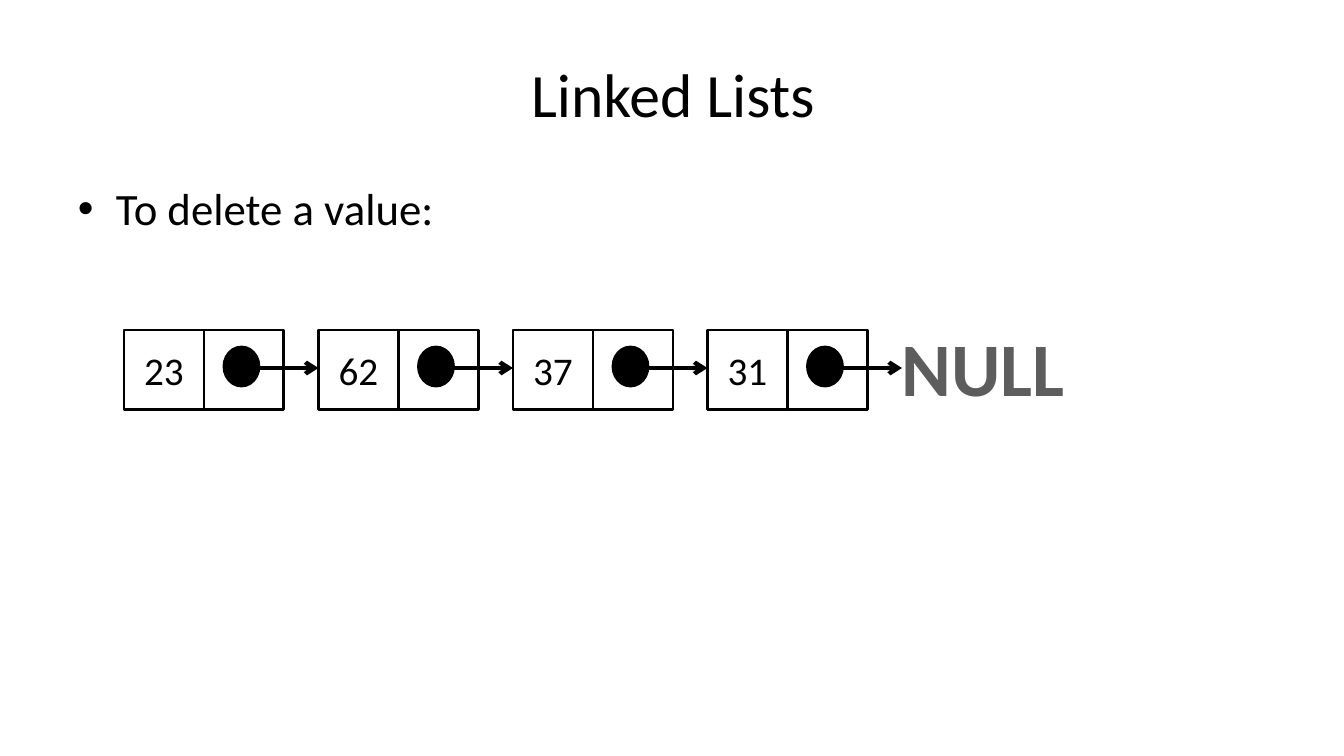
from pptx import Presentation
from pptx import util as u
from pptx.dml.color import RGBColor
from pptx.enum import shapes, text
from pptx.oxml.xmlchemy import OxmlElement

TITLE = "Linked Lists"
BULLET = "To delete a value:"
NODES = ["23", "62", "37", "31"]
END_LABEL = "NULL"

FONT = "Calibri"
COLOURS = {"ink": "000000", "null": "5D5D5D"}

# Lengths in px
PX = 914400 / 100.8
SLIDE = (1344, 756)
TITLE_BOX = (68, 30, 1210, 126)
BODY_BOX = (68, 176, 1210, 499)
NULL_BOX = (891, 316, 185, 102)
BULLET_INDENT = 38
CHAIN_LEFT, CHAIN_TOP, CHAIN_WIDTH = 124, 330, 778
CELL = 80
DOT_OFFSET, DOT_TOP, DOT_WIDTH, DOT_HEIGHT = 100, 347, 35, 39
ARROW_Y = 368


def emu(*lengths):
    return [u.Emu(round(length * PX)) for length in lengths]


def colour(name):
    return RGBColor.from_string(COLOURS[name])


def add_xml(parent, tag, **attributes):
    element = OxmlElement(tag)
    for name, value in attributes.items():
        element.set(name, str(value))
    parent.append(element)
    return element


def write(shape, wording, size, align=text.PP_ALIGN.CENTER,
          anchor=text.MSO_ANCHOR.MIDDLE, ink="ink", bold=False):
    frame = shape.text_frame
    frame.word_wrap = True
    frame.vertical_anchor = anchor
    paragraph = frame.paragraphs[0]
    paragraph.alignment = align
    run = paragraph.add_run()
    run.text = wording
    run.font.name = FONT
    run.font.size = u.Pt(size)
    run.font.bold = bold
    run.font.color.rgb = colour(ink)
    return paragraph


def add_outlined(slide, kind, box, filled=False):
    shape = slide.shapes.add_shape(kind, *emu(*box))
    shape.shadow.inherit = False
    if filled:
        shape.fill.solid()
        shape.fill.fore_color.rgb = colour("ink")
    else:
        shape.fill.background()
    shape.line.color.rgb = colour("ink")
    shape.line.width = u.Pt(2)
    return shape


def add_arrow(slide, start, end, y):
    arrow = slide.shapes.add_connector(
        shapes.MSO_CONNECTOR.STRAIGHT, *emu(start, y, end, y))
    arrow.line.color.rgb = colour("ink")
    arrow.line.width = u.Pt(3)
    add_xml(arrow.line._get_or_add_ln(), "a:tailEnd", type="arrow")
    add_xml(arrow._element.spPr, "a:effectLst")


def add_bullet(paragraph):
    properties = paragraph._p.get_or_add_pPr()
    indent, = emu(BULLET_INDENT)
    properties.set("marL", str(indent))
    properties.set("indent", str(-indent))
    add_xml(add_xml(properties, "a:spcBef"), "a:spcPct", val=20000)
    add_xml(properties, "a:buFont", typeface="Arial")
    add_xml(properties, "a:buChar", char="•")


def add_node(slide, value, left, next_left):
    """Draw a value cell and a pointer cell whose arrow reaches next_left."""
    rectangle = shapes.MSO_SHAPE.RECTANGLE
    value_cell = add_outlined(slide, rectangle, (left, CHAIN_TOP, CELL, CELL))
    write(value_cell, value, 28)
    dot_left = left + DOT_OFFSET
    add_outlined(slide, shapes.MSO_SHAPE.OVAL,
                 (dot_left, DOT_TOP, DOT_WIDTH, DOT_HEIGHT), filled=True)
    add_arrow(slide, dot_left + DOT_WIDTH, next_left, ARROW_Y)
    add_outlined(slide, rectangle, (left + CELL, CHAIN_TOP, CELL, CELL))


def main():
    presentation = Presentation()
    presentation.slide_width, presentation.slide_height = emu(*SLIDE)
    slide = presentation.slides.add_slide(presentation.slide_layouts[6])

    write(slide.shapes.add_textbox(*emu(*TITLE_BOX)), TITLE, 44)
    body = slide.shapes.add_textbox(*emu(*BODY_BOX))
    add_bullet(write(body, BULLET, 32, text.PP_ALIGN.LEFT, text.MSO_ANCHOR.TOP))

    pitch = CHAIN_WIDTH / len(NODES)
    for index, value in enumerate(NODES):
        left = CHAIN_LEFT + index * pitch
        add_node(slide, value, left, left + pitch)

    null_label = slide.shapes.add_textbox(*emu(*NULL_BOX))
    write(null_label, END_LABEL, 54, anchor=text.MSO_ANCHOR.TOP,
          ink="null", bold=True)
    null_label.text_frame.word_wrap = False

    presentation.save("out.pptx")


if __name__ == "__main__":
    main()
